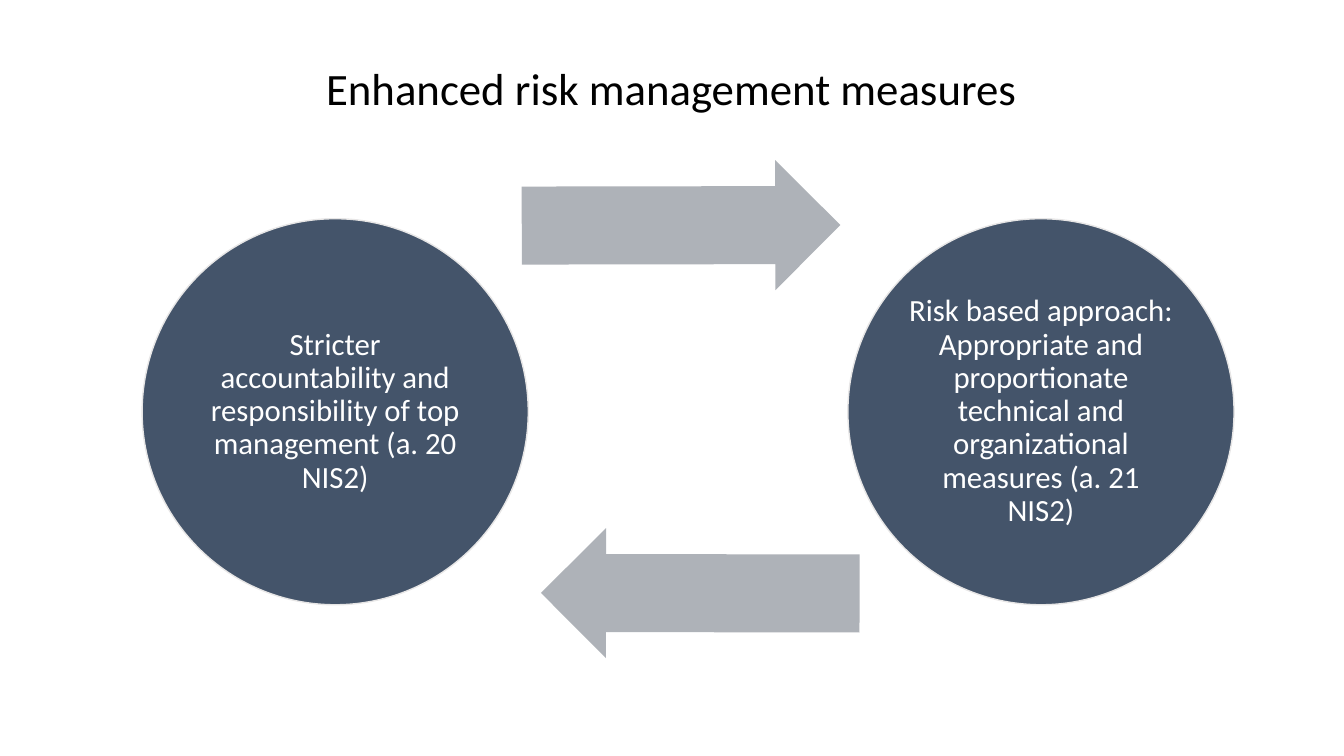
from pptx import Presentation
from pptx.dml.color import RGBColor as RGB
from pptx.enum.shapes import MSO_SHAPE as Kind
from pptx.enum.text import MSO_ANCHOR as Anchor, PP_ALIGN as Align
from pptx.util import Inches as In, Pt

HUES = {"ink": "000000", "disc": "44546A", "rim": "E7E6E6",
        "arrow": "AEB2B8", "white": "FFFFFF"}
DISC = 3.83
ARROW = (3.16, 1.29)


def hue(name):
    return RGB.from_string(HUES[name])


def write(shape, text, size, color, anchor, pads):
    frame = shape.text_frame
    frame.word_wrap = True
    frame.vertical_anchor = anchor
    frame.margin_left = frame.margin_right = In(pads[0])
    frame.margin_top = frame.margin_bottom = In(pads[1])
    para = frame.paragraphs[0]
    para.text = text
    para.alignment = Align.CENTER
    para.line_spacing = 0.9
    font = para.font
    font.name, font.size, font.color.rgb = "Calibri", Pt(size), hue(color)


def solid(slide, kind, box, color):
    shape = slide.shapes.add_shape(kind, *map(In, box))
    shape.shadow.inherit = False
    shape.fill.solid()
    shape.fill.fore_color.rgb = hue(color)
    shape.line.fill.background()
    return shape


def title(slide, box, text):
    label = slide.shapes.add_textbox(*map(In, box))
    write(label, text, 32, "ink", Anchor.BOTTOM, (0.1, 0.05))


def disc(slide, left, top, text):
    shape = solid(slide, Kind.OVAL, (left, top, DISC, DISC), "disc")
    shape.line.color.rgb = hue("rim")
    shape.line.width = Pt(1)
    write(shape, text, 22, "white", Anchor.MIDDLE, (0.03, 0.03))


def arrow(slide, left, top, turn):
    shape = solid(slide, Kind.RIGHT_ARROW, (left, top, *ARROW), "arrow")
    shape.adjustments[0] = 0.6
    shape.adjustments[1] = 0.5
    shape.rotation = turn


def cycle(slide, box, texts):
    left, top, width, height = box
    # Discs at both ends, arrows along the top and bottom edges
    mid = top + 0.58
    inset = (width - ARROW[0]) / 2
    disc(slide, left, mid, texts[0])
    arrow(slide, left + inset - 0.07, top, 359.9)
    disc(slide, left + width - DISC, mid, texts[1])
    arrow(slide, left + inset + 0.12, top + height - ARROW[1], 180.1)


def main():
    deck = Presentation()
    deck.slide_width, deck.slide_height = In(13.33), In(7.5)
    slide = deck.slides.add_slide(deck.slide_layouts[6])
    title(slide, (1.37, 0.27, 10.58, 0.92), "Enhanced risk management measures")
    cycle(slide, (1.41, 1.59, 10.83, 4.94), (
        "Stricter accountability and responsibility of top management "
        "(a. 20 NIS2)",
        "Risk based approach: Appropriate and proportionate technical and "
        "organizational measures (a. 21 NIS2)"))
    deck.save("out.pptx")


if __name__ == "__main__":
    main()
